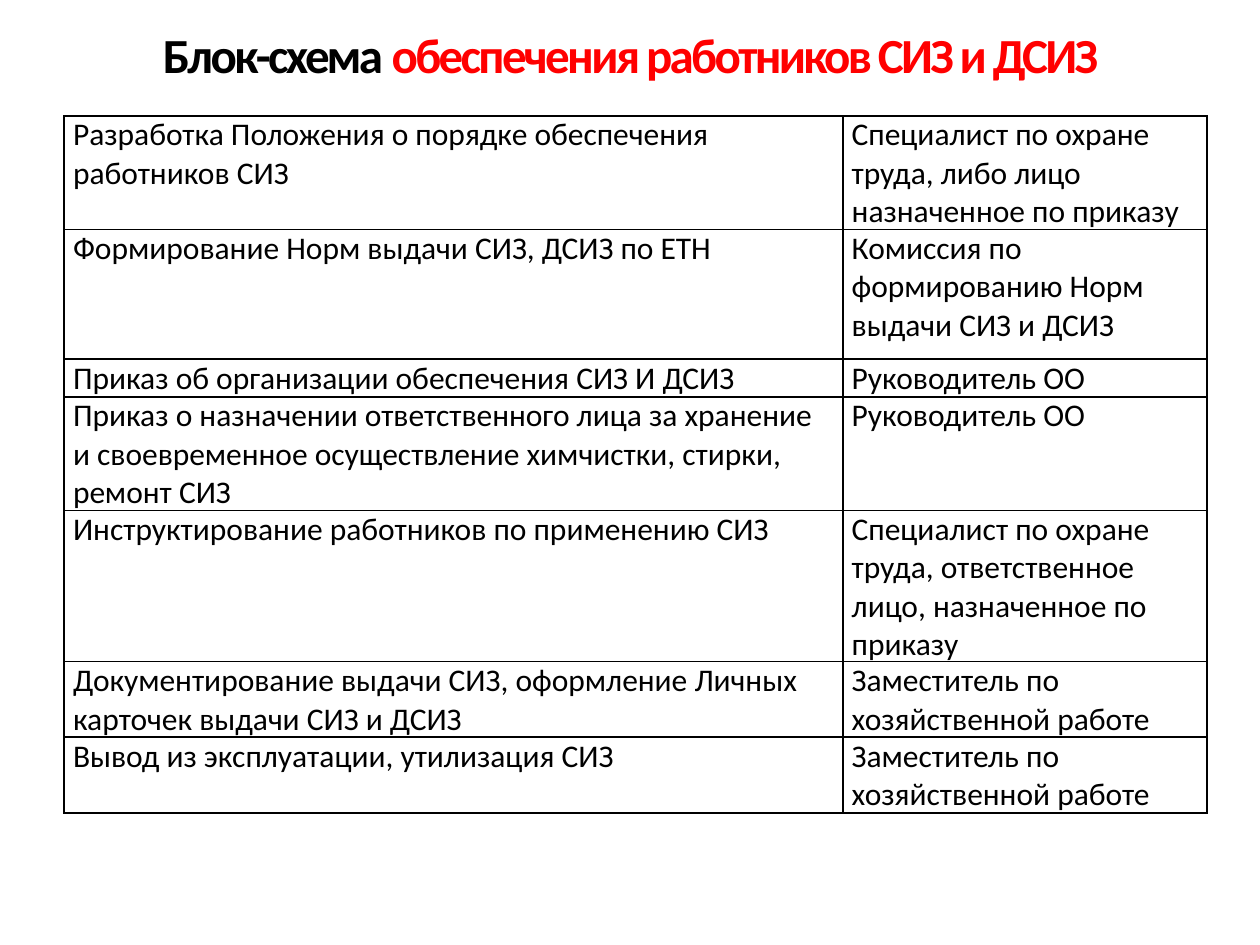
from typing import NamedTuple

from lxml import etree
from pptx import Presentation
from pptx.dml.color import RGBColor
from pptx.enum.text import MSO_ANCHOR, PP_ALIGN
from pptx.oxml.ns import qn
from pptx.util import Inches, Pt

CENTER = PP_ALIGN.CENTER
MIDDLE = MSO_ANCHOR.MIDDLE
BLACK = RGBColor(0x00, 0x00, 0x00)
RED = RGBColor(0xFF, 0x00, 0x00)
WHITE = RGBColor(0xFF, 0xFF, 0xFF)
FONT = "Calibri"

SLIDE_WIDTH, SLIDE_HEIGHT = Inches(10), Inches(7.5)
LINE_HEIGHT = Inches(0.3)  # one line of table text
COLUMN_WIDTHS = (Inches(6.18), Inches(2.89))
CELL_INSET = Inches(0.07)
BORDER_WIDTH = Pt(1)


class Step(NamedTuple):
    task: str
    responsible: str
    lines: float  # row height in lines of text


STEPS = (
    Step("Разработка Положения о порядке обеспечения работников СИЗ",
         "Специалист по охране труда, либо лицо назначенное по приказу", 3),
    Step("Формирование Норм выдачи СИЗ, ДСИЗ по ЕТН",
         "Комиссия по формированию Норм выдачи СИЗ и ДСИЗ", 3.43),
    Step("Приказ об организации обеспечения СИЗ И ДСИЗ", "Руководитель ОО", 1),
    Step("Приказ о назначении ответственного лица за хранение и своевременное "
         "осуществление химчистки, стирки, ремонт СИЗ", "Руководитель ОО", 3),
    Step("Инструктирование работников по применению СИЗ",
         "Специалист по охране труда, ответственное лицо, назначенное по приказу", 4),
    Step("Документирование выдачи СИЗ, оформление Личных карточек выдачи СИЗ и ДСИЗ",
         "Заместитель по хозяйственной работе", 2),
    Step("Вывод из эксплуатации, утилизация СИЗ",
         "Заместитель по хозяйственной работе", 2),
)


def add_title(slide, parts: tuple[tuple[str, RGBColor], ...]) -> None:
    box = slide.shapes.add_textbox(Inches(0.42), Inches(0.25), Inches(9.17), Inches(0.42))
    frame = box.text_frame
    frame.word_wrap = True
    frame.vertical_anchor = MIDDLE
    frame.margin_left = frame.margin_right = frame.margin_top = frame.margin_bottom = 0
    paragraph = frame.paragraphs[0]
    paragraph.alignment = CENTER
    paragraph.line_spacing = 0.9
    paragraph.font.name = FONT
    paragraph.font.size = Pt(28)
    paragraph.font.bold = True
    for text, color in parts:
        run = paragraph.add_run()
        run.text = text
        run.font.color.rgb = color
        run.font._element.set("spc", "-150")  # tightened letters


def add_borders(cell, color: RGBColor) -> None:
    properties = cell._tc.get_or_add_tcPr()
    for side in ("a:lnL", "a:lnR", "a:lnT", "a:lnB"):
        line = etree.SubElement(properties, qn(side), w=str(BORDER_WIDTH))
        fill = etree.SubElement(line, qn("a:solidFill"))
        etree.SubElement(fill, qn("a:srgbClr"), val=str(color))


def fill_cell(cell, text: str) -> None:
    add_borders(cell, BLACK)
    cell.fill.background()
    cell.margin_left = cell.margin_right = CELL_INSET
    cell.margin_top = cell.margin_bottom = 0
    cell.text = text
    font = cell.text_frame.paragraphs[0].font
    font.name = FONT
    font.size = Pt(18)
    font.color.rgb = BLACK


def add_step_table(slide, steps: tuple[Step, ...]) -> None:
    heights = [int(LINE_HEIGHT * step.lines) for step in steps]
    table = slide.shapes.add_table(len(steps), len(COLUMN_WIDTHS), Inches(0.51), Inches(0.92),
                                   sum(COLUMN_WIDTHS), sum(heights)).table
    table.first_row = table.horz_banding = False
    for column, width in zip(table.columns, COLUMN_WIDTHS):
        column.width = width
    for row, height, step in zip(table.rows, heights, steps):
        row.height = height
        for cell, text in zip(row.cells, (step.task, step.responsible)):
            fill_cell(cell, text)


def main() -> None:
    presentation = Presentation()
    presentation.slide_width, presentation.slide_height = SLIDE_WIDTH, SLIDE_HEIGHT
    slide = presentation.slides.add_slide(presentation.slide_layouts[6])
    slide.background.fill.solid()
    slide.background.fill.fore_color.rgb = WHITE

    # Heading
    add_title(slide, (("Блок-схема ", BLACK), ("обеспечения работников СИЗ и ДСИЗ", RED)))
    # Steps and the people responsible for them
    add_step_table(slide, STEPS)

    presentation.save("out.pptx")


if __name__ == "__main__":
    main()
